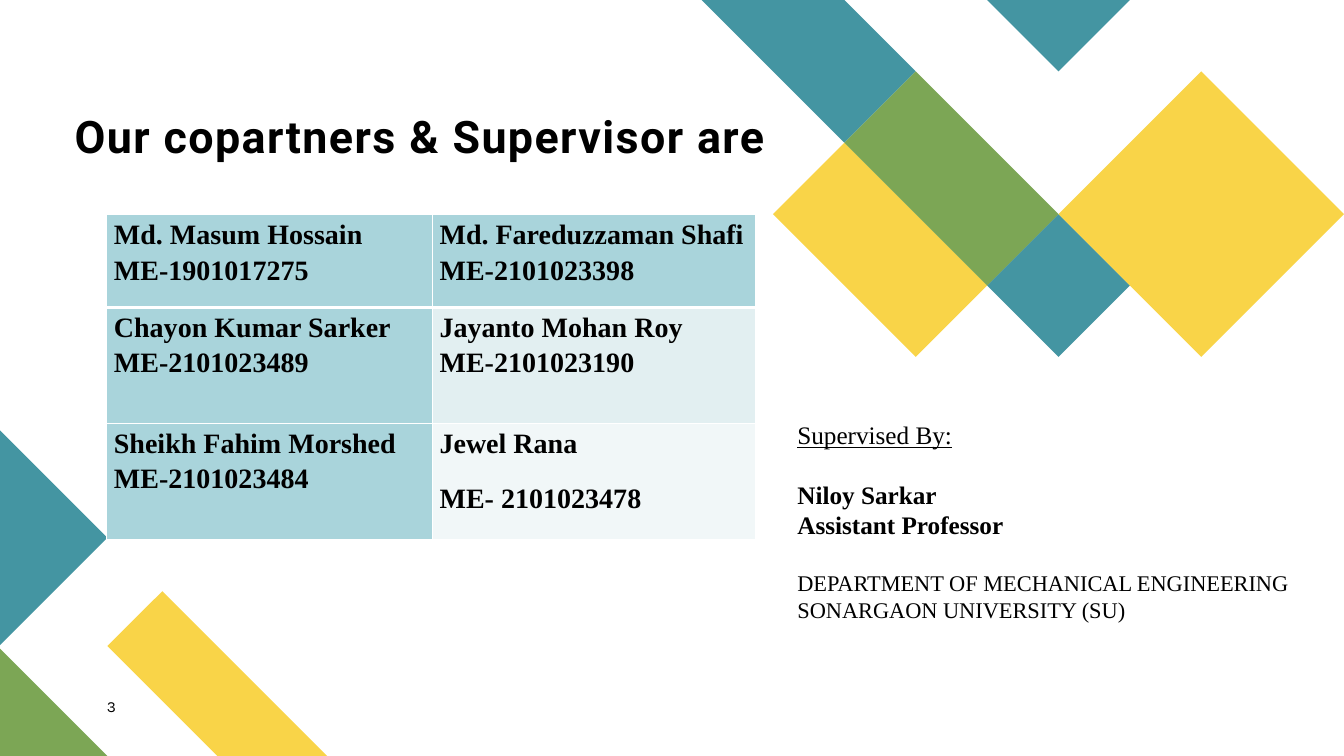
from lxml.etree import SubElement
from pptx import Presentation
from pptx.dml.color import RGBColor
from pptx.enum.text import MSO_ANCHOR as Anchor, PP_ALIGN as Align
from pptx.oxml import parse_xml
from pptx.oxml.ns import nsdecls, qn
from pptx.util import Inches, Pt

COLORS = {
    "teal": "4495A2", "green": "7CA655", "yellow": "F9D448",
    "strong": "A9D4DB", "light": "E2EFF1", "pale": "F1F7F8",
    "ink": "000000", "white": "FFFFFF",
}
SERIF = "Times New Roman"
WIDTH, HEIGHT = 13.33, 7.5

deck = Presentation()
deck.slide_width, deck.slide_height = Inches(WIDTH), Inches(HEIGHT)
slide = deck.slides.add_slide(deck.slide_layouts[6])


def write(frame, text, first=False, size=18, font=SERIF, bold=False, underline=False,
          align=None, spacing=None, before=0, after=0, tracking=None):
    """Put one formatted paragraph into a text frame."""
    line = frame.paragraphs[0] if first else frame.add_paragraph()
    line.alignment, line.line_spacing = align, spacing
    line.space_before, line.space_after = Pt(before), Pt(after)
    words = line.add_run()
    words.text = text
    words.font.size, words.font.name = Pt(size), font
    words.font.bold, words.font.underline = bold, underline
    words.font.color.rgb = RGBColor.from_string(COLORS["ink"])
    if tracking:
        words._r.get_or_add_rPr().set("spc", str(tracking))


def text_area(left, top, width, height, inset=None, anchor=Anchor.TOP):
    frame = slide.shapes.add_textbox(*map(Inches, (left, top, width, height))).text_frame
    frame.word_wrap, frame.vertical_anchor = True, anchor
    if inset is not None:
        frame.margin_left = frame.margin_right = Inches(inset)
        frame.margin_top = frame.margin_bottom = Inches(inset)
    return frame


# Diamonds: the upper group counts steps from the top right corner,
# the lower ones count steps from their own starting point
STEP, CORNER, BAND = 0.708, 1.065, 0.545
top_right = (WIDTH, 0, -STEP, STEP)
bottom_left = (0, HEIGHT, CORNER, -CORNER)
side = (0, 4.27, CORNER, CORNER)
band = (CORNER, HEIGHT, BAND, -BAND)
diamonds = [
    ("yellow", band, [(4, 0), (2, 0), (0, 2), (1, 3)]),
    ("green", bottom_left, [(1, 0), (0, 0), (0, 1)]),
    ("teal", side, [(0, 0), (1, 1), (0, 2)]),
    ("teal", top_right, [(6, 1), (7, 0), (9, 0), (7, 2)]),
    ("teal", top_right, [(3, 4), (4, 3), (5, 4), (4, 5)]),
    ("yellow", top_right, [(7, 2), (8, 3), (6, 5), (5, 4)]),
    ("teal", top_right, [(3, 0), (5, 0), (4, 1)]),
    ("green", top_right, [(6, 1), (7, 2), (5, 4), (4, 3)]),
    ("yellow", top_right, [(0, 3), (2, 1), (4, 3), (2, 5)]),
]
for color, (x0, y0, dx, dy), corners in diamonds:
    points = [(Inches(x0 + col * dx), Inches(y0 + row * dy)) for col, row in corners]
    outline = slide.shapes.build_freeform(*points[0])
    outline.add_line_segments(points[1:], close=True)
    diamond = outline.convert_to_shape()
    diamond.shadow.inherit = False
    diamond.fill.solid()
    diamond.fill.fore_color.rgb = RGBColor.from_string(COLORS[color])
    diamond.line.fill.background()

# Title and slide number
write(text_area(0.74, 0.95, 8.24, 0.67, inset=0, anchor=Anchor.BOTTOM),
      "Our copartners & Supervisor are", first=True, size=32, font="Roboto",
      bold=True, spacing=0.9, tracking=100)
write(text_area(1.06, 6.92, 0.57, 0.27, inset=0), "3", first=True, size=11, font="Karla")

# Supervisor
supervisor = text_area(7.81, 4.11, 5.88, 2.52)
write(supervisor, "Supervised By:", first=True, underline=True)
write(supervisor, "Niloy Sarkar", bold=True, before=21)
write(supervisor, "Assistant Professor", bold=True)
write(supervisor, "DEPARTMENT OF MECHANICAL ENGINEERING", size=16, before=21)
write(supervisor, "SONARGAON UNIVERSITY (SU)", size=16)

# Partners: name, number, fill, alignment
partners = [
    [("Md. Masum Hossain", "ME-1901017275", "strong", None),
     ("Md. Fareduzzaman Shafi", "ME-2101023398", "strong", Align.JUSTIFY)],
    [("Chayon Kumar Sarker", "ME-2101023489", "strong", Align.JUSTIFY),
     ("Jayanto Mohan Roy", "ME-2101023190", "light", None)],
    [("Sheikh Fahim Morshed", "ME-2101023484", "strong", None),
     ("Jewel Rana", "ME- 2101023478", "pale", None)],
]
col_widths, row_heights = (3.23, 3.2), (0.92, 1.15, 1.15)
grid = slide.shapes.add_table(3, 2, Inches(1.06), Inches(2.13),
                              Inches(sum(col_widths)), Inches(sum(row_heights))).table
for column, width in zip(grid.columns, col_widths):
    column.width = Inches(width)
for r, (row, height) in enumerate(zip(partners, row_heights)):
    grid.rows[r].height = Inches(height)
    for c, (name, number, color, align) in enumerate(row):
        cell = grid.cell(r, c)
        cell.margin_left = cell.margin_right = Inches(0.07)
        cell.margin_top = cell.margin_bottom = 0
        cell.fill.solid()
        cell.fill.fore_color.rgb = RGBColor.from_string(COLORS[color])
        # The rule under the first row is heavier
        for i, edge in enumerate(("lnL", "lnR", "lnT", "lnB")):
            heavy = (r, edge) in ((0, "lnB"), (1, "lnT"))
            border = parse_xml(f'<a:{edge} {nsdecls("a")} w="{Pt(3 if heavy else 1)}"/>')
            paint = SubElement(border, qn("a:solidFill"))
            SubElement(paint, qn("a:srgbClr"), val=COLORS["white"])
            cell._tc.get_or_add_tcPr().insert(i, border)
        write(cell.text_frame, name, first=True, size=20, bold=True, align=align, spacing=1.15)
        if name == "Jewel Rana":
            write(cell.text_frame, number, size=20, bold=True, align=Align.JUSTIFY,
                  spacing=1.5, before=6, after=6)
        else:
            write(cell.text_frame, number, size=20, bold=True, align=align, spacing=1.15)

deck.save("out.pptx")
